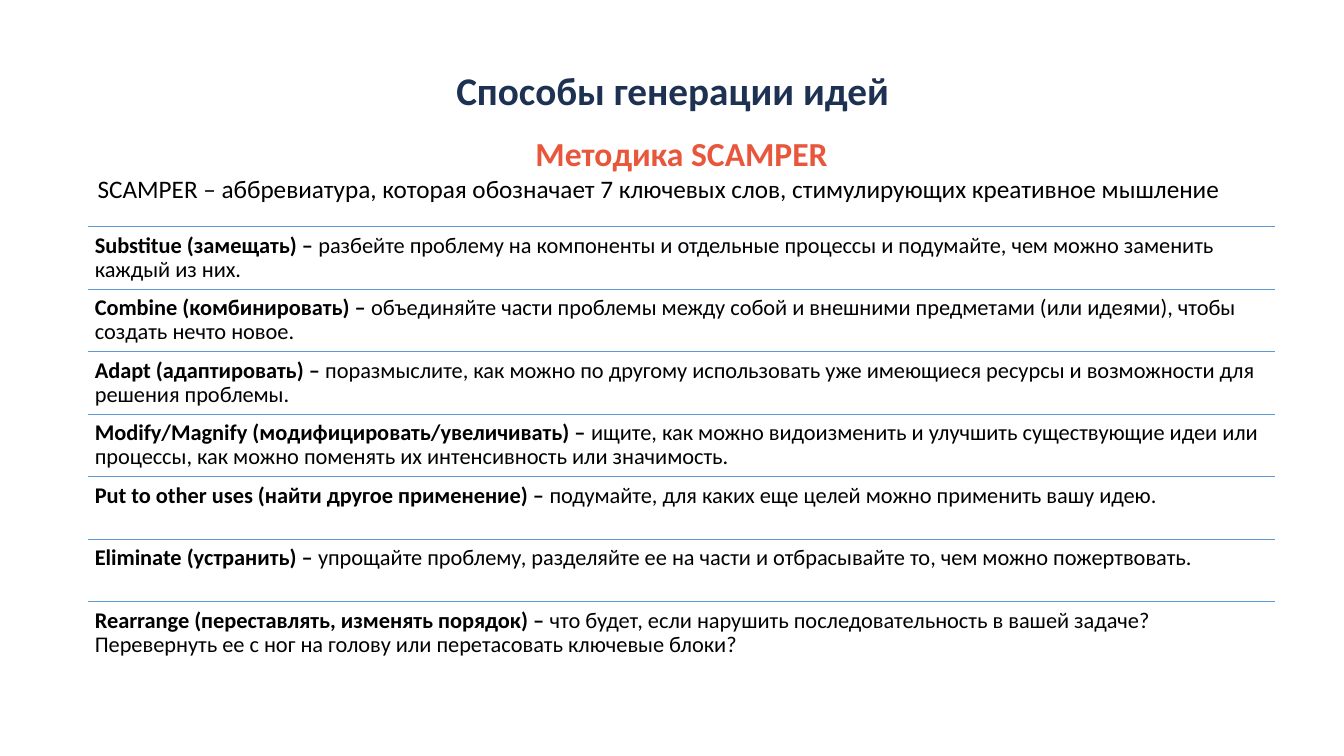
from dataclasses import dataclass

from lxml.etree import SubElement as SubEl
from pptx import Presentation
from pptx.dml.color import RGBColor as Rgb
from pptx.enum.shapes import MSO_CONNECTOR as Conn
from pptx.enum.text import MSO_ANCHOR as Anchor, PP_ALIGN as Align
from pptx.oxml.ns import qn
from pptx.util import Pt

PX = 9144  # EMU per px, 100 px to the inch


@dataclass(frozen=True)
class Theme:
    font: str = "Calibri"
    navy: str = "1D3152"
    coral: str = "E8573C"
    black: str = "000000"
    blue: str = "5B9BD5"
    title: int = 28
    head: int = 24
    lead: int = 18
    body: int = 16


THEME = Theme()

# Row grid
LEFT, TOP, WIDTH, STEP = 87, 225, 1178, 62

ROWS = [
    ("Substitue (замещать)",
     "разбейте проблему на компоненты и отдельные процессы и подумайте, "
     "чем можно заменить каждый из них."),
    ("Combine (комбинировать)",
     "объединяйте части проблемы между собой и внешними предметами "
     "(или идеями), чтобы создать нечто новое."),
    ("Adapt (адаптировать)",
     "поразмыслите, как можно по другому использовать уже имеющиеся "
     "ресурсы и возможности для решения проблемы."),
    ("Modify/Magnify (модифицировать/увеличивать)",
     "ищите, как можно видоизменить и улучшить существующие идеи или "
     "процессы, как можно поменять их интенсивность или значимость."),
    ("Put to other uses (найти другое применение)",
     "подумайте, для каких еще целей можно применить вашу идею."),
    ("Eliminate (устранить)",
     "упрощайте проблему, разделяйте ее на части и отбрасывайте то, "
     "чем можно пожертвовать."),
    ("Rearrange (переставлять, изменять порядок)",
     "что будет, если нарушить последовательность в вашей задаче? "
     "Перевернуть ее с ног на голову или перетасовать ключевые блоки?"),
]


def add_box(shapes, x, y, w, h, pad=(10, 5), anchor=Anchor.TOP):
    box = shapes.add_textbox(x * PX, y * PX, w * PX, h * PX)
    frame = box.text_frame
    frame.word_wrap = True
    frame.vertical_anchor = anchor
    frame.margin_left = frame.margin_right = pad[0] * PX
    frame.margin_top = frame.margin_bottom = pad[1] * PX
    return frame


def add_text(par, text, size=THEME.body, color=THEME.black, bold=False):
    run = par.add_run()
    run.text = text
    font = run.font
    font.name, font.size, font.bold = THEME.font, Pt(size), bold
    font.color.rgb = Rgb.from_string(color)


def add_rule(shapes, x, y, w):
    rule = shapes.add_connector(
        Conn.STRAIGHT, x * PX, y * PX, (x + w) * PX, y * PX)
    rule.line.color.rgb = Rgb.from_string(THEME.blue)
    rule.line.width = Pt(1)
    SubEl(rule.element.spPr, qn("a:effectLst"))


def add_row(shapes, y, term, note):
    add_rule(shapes, LEFT, y, WIDTH)
    par = add_box(shapes, LEFT, y, WIDTH, STEP, pad=(7, 7)).paragraphs[0]
    par.line_spacing = 0.9
    add_text(par, f"{term} – ", bold=True)
    add_text(par, note)


def main():
    deck = Presentation()
    deck.slide_width, deck.slide_height = 1333 * PX, 750 * PX
    shapes = deck.slides.add_slide(deck.slide_layouts[6]).shapes

    # Title
    title = add_box(shapes, 84, 58, 1166, 63, pad=(5, 5),
                    anchor=Anchor.MIDDLE).paragraphs[0]
    title.alignment = Align.CENTER
    add_text(title, "Способы генерации идей",
             size=THEME.title, color=THEME.navy, bold=True)

    # Method name and what it stands for
    intro = add_box(shapes, LEFT, 127, WIDTH, 81)
    head = intro.paragraphs[0]
    head.alignment = Align.CENTER
    add_text(head, "Методика SCAMPER",
             size=THEME.head, color=THEME.coral, bold=True)
    add_text(intro.add_paragraph(),
             "SCAMPER – аббревиатура, которая обозначает 7 ключевых слов, "
             "стимулирующих креативное мышление", size=THEME.lead)

    # Seven key words
    group = shapes.add_group_shape().shapes
    for i, (term, note) in enumerate(ROWS):
        add_row(group, TOP + i * STEP, term, note)

    deck.save("out.pptx")


if __name__ == "__main__":
    main()
